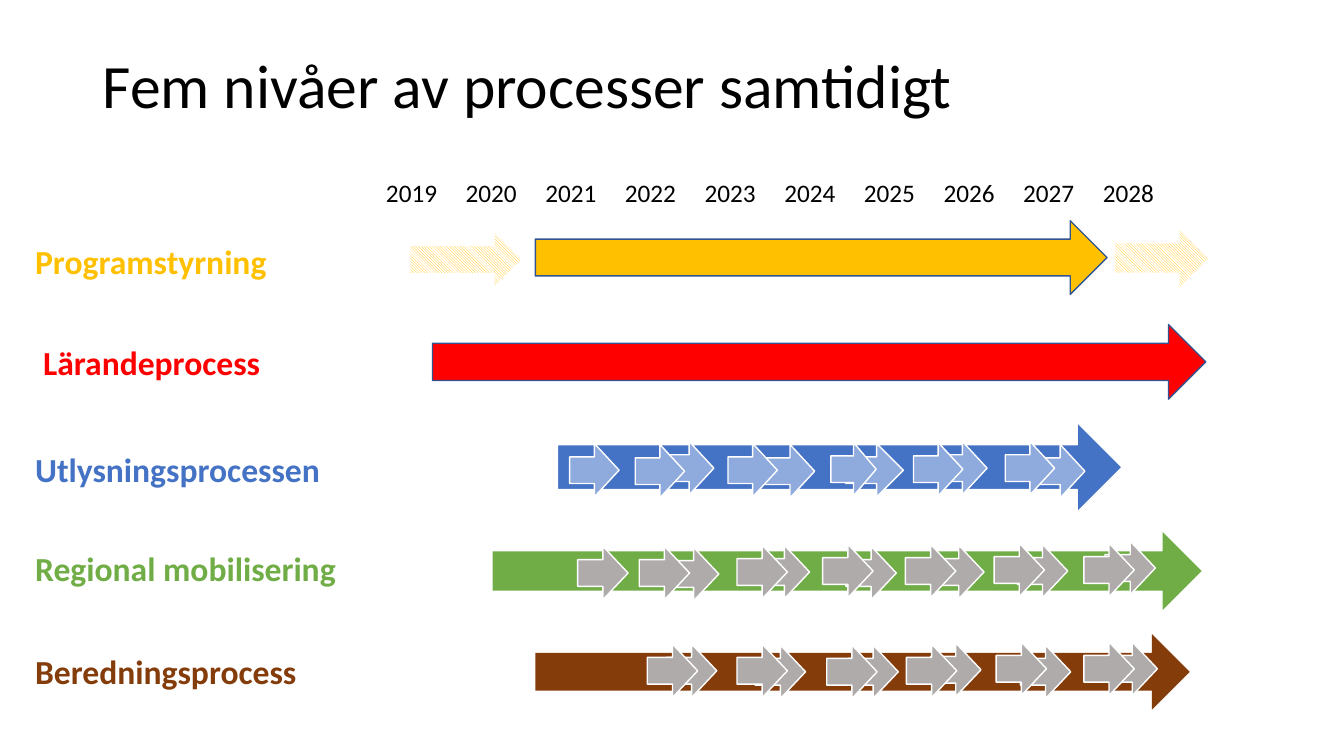
from lxml import etree
from pptx import Presentation
from pptx.dml.color import RGBColor
from pptx.enum import dml, shapes, text
from pptx.oxml.ns import qn
from pptx.util import Inches, Pt

COLORS = {
    "black": "000000", "white": "FFFFFF", "outline": "325491",
    "gold": "FFC000", "red": "FF0000", "blue": "4472C4", "light_blue": "8FAADC",
    "green": "70AD47", "brown": "843C0B", "gray": "AFABAB",
}
FONT = "Calibri"
YEARS = range(2019, 2029)
YEAR_PITCH = 0.79
CALL_WIDTH, STEP_WIDTH, PULSE_HEIGHT = 0.49, 0.5, 0.53

# Small arrows, back to front: left and top offset from the main arrow, width
CALLS = [
    (4.74, 0.22, CALL_WIDTH), (3.77, 0.19, CALL_WIDTH), (3.53, 0.2, CALL_WIDTH),
    (2.86, 0.21, 0.57), (2.06, 0.22, CALL_WIDTH), (1.69, 0.21, CALL_WIDTH),
    (1.06, 0.19, CALL_WIDTH), (0.77, 0.22, CALL_WIDTH), (2.71, 0.2, 0.45),
    (0.12, 0.21, CALL_WIDTH), (4.44, 0.19, CALL_WIDTH),
]
MOBILISATIONS = [(dx, dy, STEP_WIDTH) for dx, dy in [
    (1.75, 0.17), (2.65, 0.15), (2.43, 0.15), (3.51, 0.16), (3.28, 0.14),
    (4.38, 0.15), (4.1, 0.14), (5.21, 0.14), (1.46, 0.16), (0.85, 0.16),
    (4.98, 0.13), (6.08, 0.11), (5.87, 0.13),
]]
PREPARATIONS = [(dx, dy, STEP_WIDTH) for dx, dy in [
    (1.3, 0.1), (1.11, 0.1), (2.18, 0.11), (2, 0.1), (3.1, 0.11), (3.92, 0.09),
    (4.81, 0.11), (4.57, 0.08), (5.67, 0.08), (5.44, 0.08), (2.89, 0.11),
    (3.68, 0.1),
]]

# Label, label box, main arrow box, fill, line, small arrows, their fill
PROCESSES = [
    ("Programstyrning", (0.25, 2.34, 2.52, 0.5), (5.31, 2.19, 5.67, 0.73),
     "gold", "outline", [], None),
    ("Lärandeprocess", (0.33, 3.34, 2.38, 0.5), (4.29, 3.22, 7.67, 0.74),
     "red", "outline", [], None),
    ("Utlysningsprocessen", (0.25, 4.4, 3.06, 0.5), (5.53, 4.19, 5.6, 0.89),
     "blue", "white", CALLS, "light_blue"),
    ("Regional mobilisering", (0.25, 5.39, 3.21, 0.5), (4.88, 5.26, 7.05, 0.81),
     "green", "white", MOBILISATIONS, "gray"),
    ("Beredningsprocess", (0.25, 6.41, 2.82, 0.5), (5.31, 6.29, 6.49, 0.75),
     "brown", None, PREPARATIONS, "gray"),
]
TRANSITIONS = [(4.07, 2.31, 1.1, 0.53), (11.06, 2.27, 0.93, 0.58)]


def rgb(name):
    return RGBColor.from_string(COLORS[name])


def inches(box):
    return [Inches(length) for length in box]


def add_run(paragraph, wording, size, color, bold=False):
    run = paragraph.add_run()
    run.text = wording
    run.font.name, run.font.size, run.font.bold = FONT, Pt(size), bold
    run.font.color.rgb = rgb(color)


def add_label(slide, box, wording, size, color, bold=False):
    label = slide.shapes.add_textbox(*inches(box))
    label.text_frame.word_wrap = False
    paragraph = label.text_frame.paragraphs[0]
    add_run(paragraph, wording, size, color, bold)
    return paragraph


def add_arrow(slide, box, fill, line=None, hatched=False):
    arrow = slide.shapes.add_shape(shapes.MSO_SHAPE.RIGHT_ARROW, *inches(box))
    arrow.shadow.inherit = False
    if hatched:
        arrow.fill.patterned()
        arrow.fill.pattern = dml.MSO_PATTERN.DARK_DOWNWARD_DIAGONAL
        arrow.fill.fore_color.rgb = rgb(fill)
        arrow.fill.back_color.rgb = rgb("white")
    else:
        arrow.fill.solid()
        arrow.fill.fore_color.rgb = rgb(fill)
    if line:
        arrow.line.color.rgb = rgb(line)
        arrow.line.width = Pt(1)
    else:
        arrow.line.fill.background()


def add_title(slide, box, wording):
    title = slide.shapes.title
    title.left, title.top, title.width, title.height = inches(box)
    title.text_frame.vertical_anchor = text.MSO_ANCHOR.MIDDLE
    paragraph = title.text_frame.paragraphs[0]
    paragraph.alignment = text.PP_ALIGN.LEFT
    paragraph.line_spacing = 0.9
    add_run(paragraph, wording, 44, "black")


def add_timeline(slide, box):
    paragraph = add_label(slide, box, "\t".join(map(str, YEARS)), 18, "black")
    # One tab stop per year
    properties = paragraph._p.get_or_add_pPr()
    stops = etree.SubElement(properties, qn("a:tabLst"))
    for index in range(1, len(YEARS)):
        etree.SubElement(stops, qn("a:tab"), algn="l",
                         pos=str(Inches(YEAR_PITCH * index)))


def add_process(slide, box, label, label_box, fill, line, pulses, pulse_fill):
    add_label(slide, label_box, label, 24, fill, bold=True)
    add_arrow(slide, box, fill, line)
    left, top = box[:2]
    for dx, dy, width in pulses:
        add_arrow(slide, (left + dx, top + dy, width, PULSE_HEIGHT),
                  pulse_fill, "white")


def main():
    deck = Presentation()
    deck.slide_width, deck.slide_height = Inches(13.33), Inches(7.5)
    slide = deck.slides.add_slide(deck.slide_layouts[5])

    # Heading and years
    add_title(slide, (0.92, 0.4, 11.5, 0.95), "Fem nivåer av processer samtidigt")
    add_timeline(slide, (3.73, 1.71, 7.98, 0.4))

    # Five process levels
    for label, label_box, box, fill, line, pulses, pulse_fill in PROCESSES:
        add_process(slide, box, label, label_box, fill, line, pulses, pulse_fill)

    # Periods before and after the programme
    for box in TRANSITIONS:
        add_arrow(slide, box, "gold", hatched=True)

    deck.save("out.pptx")


if __name__ == "__main__":
    main()
